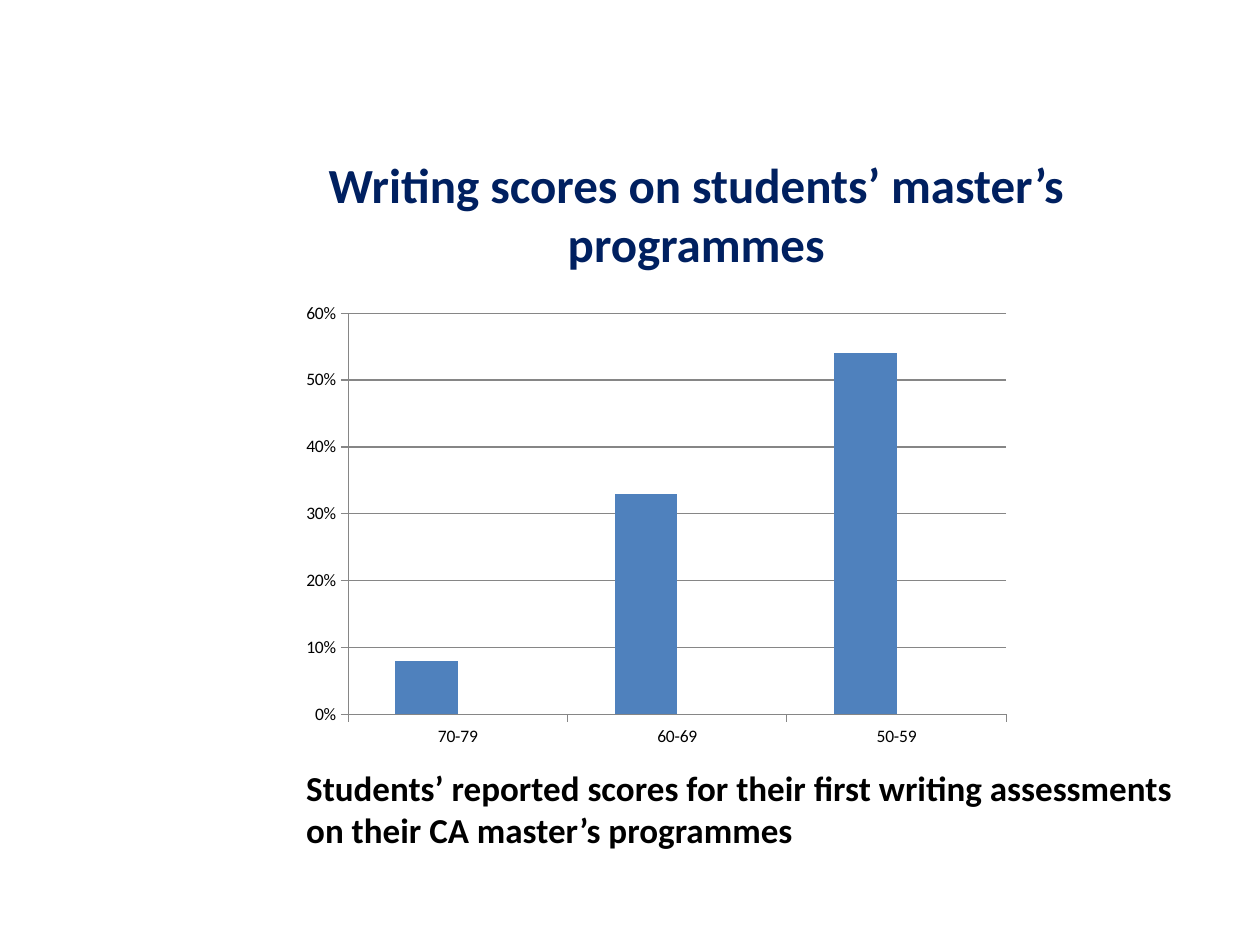
from lxml import etree
from pptx import Presentation
from pptx import util as u
from pptx.chart.data import CategoryChartData
from pptx.dml.color import RGBColor
from pptx.enum import chart as charts, text
from pptx.oxml.ns import qn

COLORS = {
    "title": "002060",
    "text": "000000",
    "axis": "868686",
    "first": "4F81BD",
    "second": "C0504D",
}


def rgb(name):
    return RGBColor.from_string(COLORS[name])


class ScoreSlide:
    """Holds the style and the current slide."""

    font_name = "Calibri"

    def __init__(self, prs):
        self.slide = prs.slides.add_slide(prs.slide_layouts[5])

    def style(self, font, size, color, bold=False):
        font.name = self.font_name
        font.size = u.Pt(size)
        font.bold = bold
        font.color.rgb = rgb(color)

    def title(self, wording, left, top, width, height):
        title = self.slide.shapes.title
        title.left, title.top = u.Inches(left), u.Inches(top)
        title.width, title.height = u.Inches(width), u.Inches(height)
        frame = title.text_frame
        frame.text = wording
        frame.vertical_anchor = text.MSO_ANCHOR.MIDDLE
        heading = frame.paragraphs[0]
        heading.alignment = text.PP_ALIGN.CENTER
        self.style(heading.font, 28, "title", bold=True)

    def caption(self, lines, left, top, width, height):
        box = self.slide.shapes.add_textbox(*map(u.Inches, (left, top, width, height)))
        frame = box.text_frame
        frame.word_wrap = True
        frame.auto_size = text.MSO_AUTO_SIZE.SHAPE_TO_FIT_TEXT
        frame.vertical_anchor = text.MSO_ANCHOR.MIDDLE
        frame.margin_left = u.Inches(0.24)
        frame.text = "\n".join(lines)
        for line in frame.paragraphs:
            self.style(line.font, 20, "text", bold=True)

    def columns(self, categories, series, plot_area, left, top, width, height):
        data = CategoryChartData(number_format="0%")
        data.categories = categories
        for name, values, _ in series:
            data.add_series(name, values)
        chart = self.slide.shapes.add_chart(
            charts.XL_CHART_TYPE.COLUMN_CLUSTERED,
            *map(u.Inches, (left, top, width, height)), data).chart
        chart.has_title = False
        chart.has_legend = False
        self.style(chart.font, 10, "text")

        # Columns
        plot = chart.plots[0]
        plot.gap_width = 150
        plot.overlap = 0
        plot.vary_by_categories = False
        for columns, (_, _, color) in zip(plot.series, series):
            columns.format.fill.solid()
            columns.format.fill.fore_color.rgb = rgb(color)

        # Axes and gridlines
        scores, shares = chart.category_axis, chart.value_axis
        shares.minimum_scale, shares.maximum_scale, shares.major_unit = 0, 0.6, 0.1
        shares.tick_labels.number_format = "0%"
        shares.tick_labels.number_format_is_linked = False
        shares.has_major_gridlines = True
        for axis in (scores, shares):
            axis.major_tick_mark = charts.XL_TICK_MARK.OUTSIDE
        for part in (scores, shares, shares.major_gridlines):
            part.format.line.color.rgb = rgb("axis")
            part.format.line.width = u.Pt(0.75)
        self.place_plot(chart, plot_area)

    def place_plot(self, chart, plot_area):
        area = chart._chartSpace.find(".//" + qn("c:plotArea"))
        for old in area.findall(qn("c:layout")):
            area.remove(old)
        layout = etree.Element(qn("c:layout"))
        manual = etree.SubElement(layout, qn("c:manualLayout"))
        settings = [("layoutTarget", "inner"), ("xMode", "edge"), ("yMode", "edge")]
        for tag, value in settings + list(zip("xywh", plot_area)):
            etree.SubElement(manual, qn("c:" + tag)).set("val", str(value))
        area.insert(0, layout)


def main():
    prs = Presentation()
    prs.slide_width, prs.slide_height = u.Inches(10), u.Inches(7.5)
    page = ScoreSlide(prs)

    # Title
    page.title("Writing scores on students’ master’s programmes", 1.55, 1.07, 7.95, 1.25)

    # Share of students in each score band
    page.columns(
        ["70-79", "60-69", "50-59"],
        [("Series 1", (0.08, 0.33, 0.54), "first"),
         ("Series 2", (None, None, None), "second")],
        (0.086, 0.05, 0.783, 0.737),
        2.19, 2.27, 6.67, 4.32)

    # Caption below the chart
    page.caption(
        ["Students’ reported scores for their first writing assessments",
         "on their CA master’s programmes"],
        2.19, 6.03, 7.31, 0.77)

    prs.save("out.pptx")


if __name__ == "__main__":
    main()
